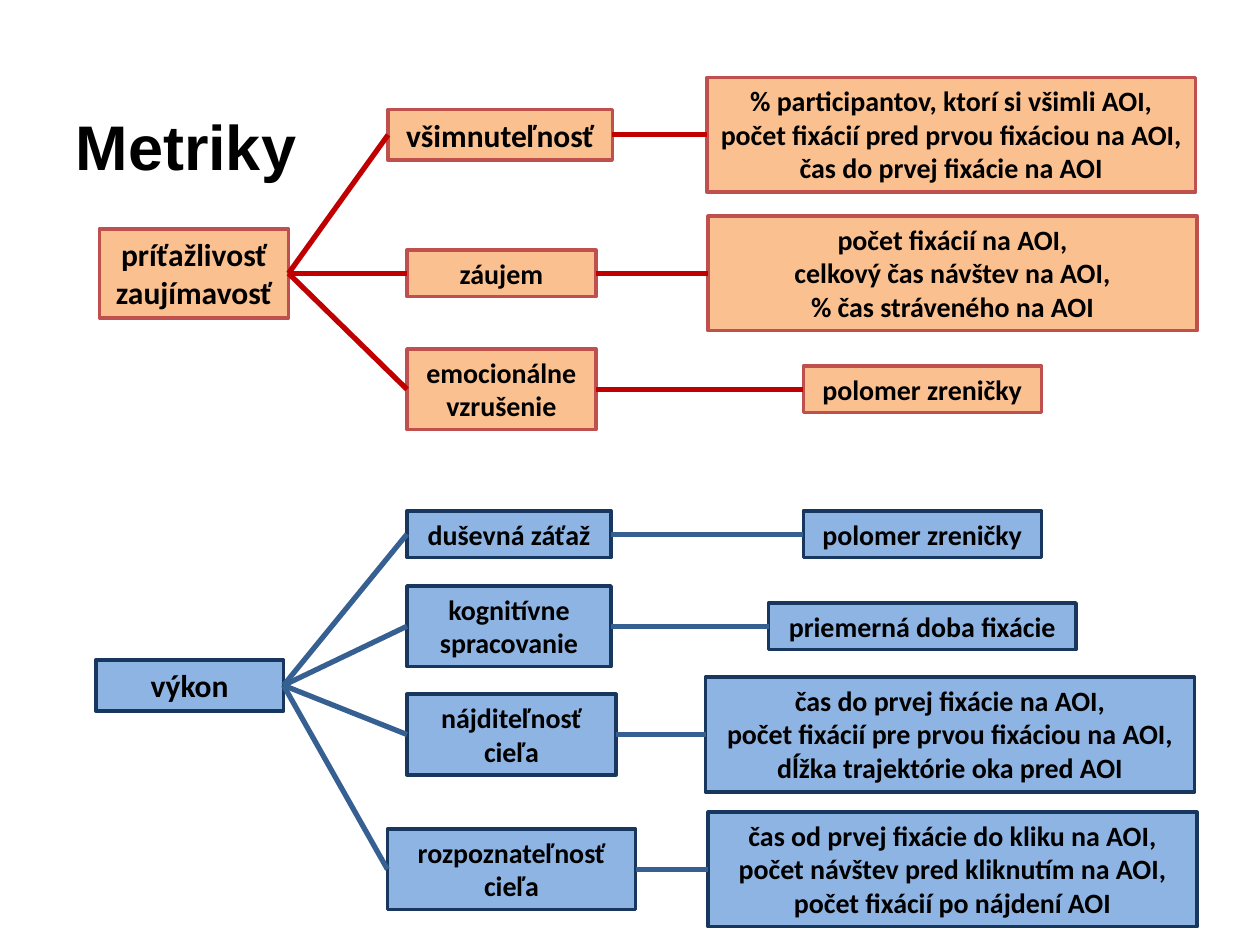
from lxml.etree import SubElement
from pptx import Presentation
from pptx.dml.color import RGBColor
from pptx.enum.shapes import MSO_CONNECTOR, MSO_SHAPE
from pptx.enum.text import MSO_ANCHOR, MSO_AUTO_SIZE, PP_ALIGN
from pptx.oxml.ns import qn
from pptx.util import Inches, Pt

presentation = Presentation()
presentation.slide_width = Inches(10)
presentation.slide_height = Inches(7.5)
slide = presentation.slides.add_slide(presentation.slide_layouts[5])

# Horizontal and vertical lengths are percentages of the slide
COLUMN = presentation.slide_width / 100
ROW = presentation.slide_height / 100
RIGHT_SITE, LEFT_SITE = 3, 1


def write(shape, text, size=16, font="Calibri", align=PP_ALIGN.CENTER, anchor=MSO_ANCHOR.TOP):
    frame = shape.text_frame
    frame.word_wrap = True
    frame.auto_size = MSO_AUTO_SIZE.NONE
    frame.vertical_anchor = anchor
    frame.text = text
    for paragraph in frame.paragraphs:
        paragraph.alignment = align
        for run in paragraph.runs:
            run.font.name = font
            run.font.size = Pt(size)
            run.font.bold = True
            run.font.color.rgb = RGBColor.from_string("000000")


def add_box(text, center, middle, width, lines, fill, border, size=16):
    height = 1.33 + 0.225 * size * lines
    box = slide.shapes.add_shape(
        MSO_SHAPE.RECTANGLE,
        round((center - width / 2) * COLUMN), round((middle - height / 2) * ROW),
        round(width * COLUMN), round(height * ROW))
    box.shadow.inherit = False
    box.fill.solid()
    box.fill.fore_color.rgb = RGBColor.from_string(fill)
    box.line.color.rgb = RGBColor.from_string(border)
    box.line.width = Pt(2)
    write(box, text, size)
    return box


# Title
title = slide.shapes.title
title.left, title.top = round(5 * COLUMN), round(4 * ROW)
title.width, title.height = round(90 * COLUMN), round(16.67 * ROW)
write(title, "Metriky", size=36, font="Arial", align=PP_ALIGN.LEFT, anchor=MSO_ANCHOR.BOTTOM)
title.text_frame.margin_top = title.text_frame.margin_bottom = Inches(0.1)

# Trees: each branch is (middle, metric, measure)
# metric and measure: text, center, width, lines and, if not 16, size
# "\n" starts a paragraph, "\v" breaks a line
trees = [
    {"fill": "FAC090", "border": "C0504D", "link": "C00000",
     "root": ("príťažlivosť zaujímavosť", 15.4, 28.93, 15, 2),
     "branches": [
         (14.27, ("všimnuteľnosť", 39.7, 17.8, 1, 18),
          ("% participantov, ktorí si všimli AOI,\npočet fixácií pred prvou fixáciou na AOI,\n"
           "čas do prvej fixácie na AOI", 75.5, 38.8, 3)),
         (28.93, ("záujem", 39.8, 15, 1),
          ("počet fixácií na AOI,\vcelkový čas návštev na AOI,\v% čas stráveného na AOI",
           75.6, 38.8, 3)),
         (41.2, ("emocionálne vzrušenie", 39.8, 15, 2), ("polomer zreničky", 73.2, 18.9, 1)),
     ]},
    {"fill": "8EB4E3", "border": "17375E", "link": "376092",
     "root": ("výkon", 15.05, 72.53, 14.9, 1),
     "branches": [
         (56.53, ("duševná záťaž", 40.4, 16.2, 1), ("polomer zreničky", 73.2, 18.9, 1)),
         (66.27, ("kognitívne spracovanie", 40.4, 16.2, 2),
          ("priemerná doba fixácie", 73.2, 24.4, 1)),
         (77.73, ("nájditeľnosť cieľa", 40.6, 16.6, 2),
          ("čas do prvej fixácie na AOI,\vpočet fixácií pre prvou fixáciou na AOI,\n"
           "dĺžka trajektórie oka pred AOI", 75.4, 38.8, 3)),
         (92, ("rozpoznateľnosť cieľa", 40.6, 19.7, 2),
          ("čas od prvej fixácie do kliku na AOI,\vpočet návštev pred kliknutím na AOI,\n"
           "počet fixácií po nájdení AOI", 75.6, 38.8, 3)),
     ]},
]

for tree in trees:
    colors = tree["fill"], tree["border"]
    root = add_box(*tree["root"], *colors, size=18)
    links = []
    for middle, metric, measure in tree["branches"]:
        text, center, width, lines, *size = metric
        metric_box = add_box(text, center, middle, width, lines, *colors, *size)
        text, center, width, lines = measure
        measure_box = add_box(text, center, middle, width, lines, *colors)
        links += [(root, metric_box), (metric_box, measure_box)]

    # Lines glued to the sides of the boxes
    for start, end in links:
        link = slide.shapes.add_connector(MSO_CONNECTOR.STRAIGHT, 0, 0, 0, 0)
        link.begin_connect(start, RIGHT_SITE)
        link.end_connect(end, LEFT_SITE)
        link.line.color.rgb = RGBColor.from_string(tree["link"])
        link.line.width = Pt(3)
        SubElement(link._element.spPr, qn("a:effectLst"))

presentation.save("out.pptx")
